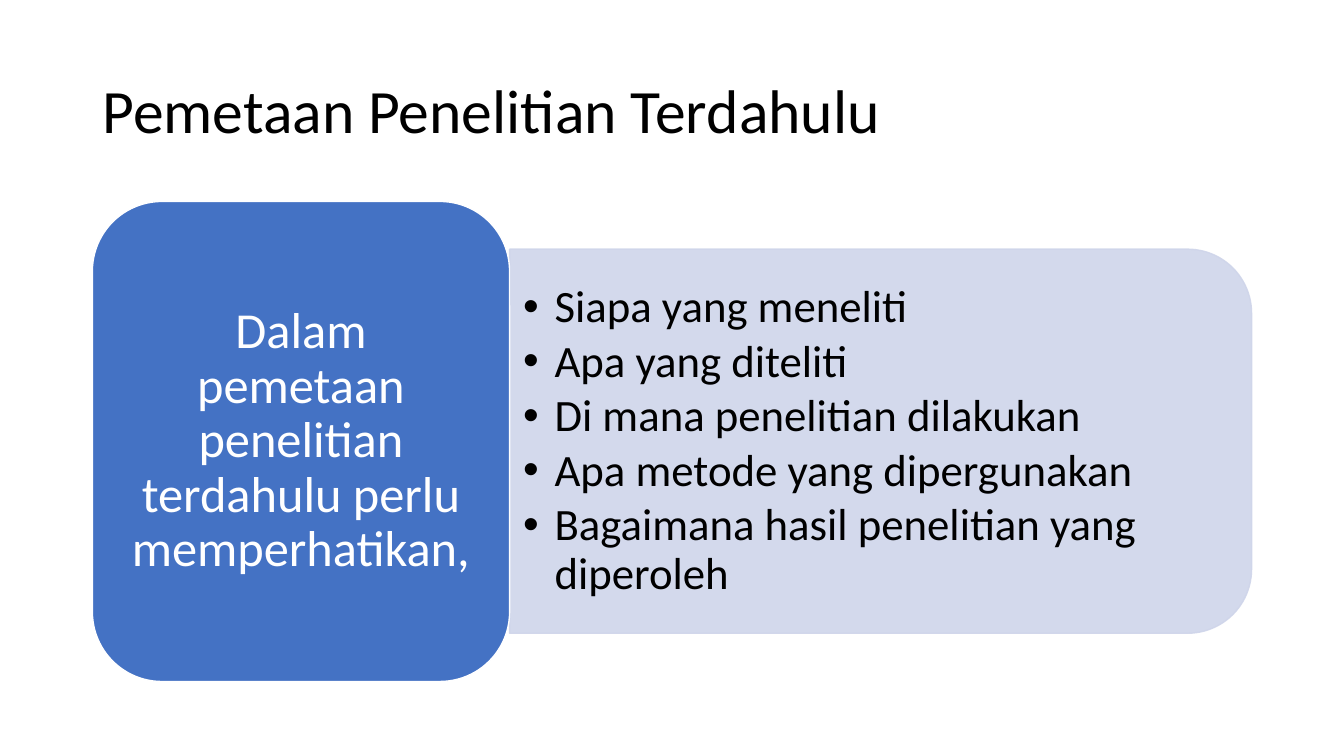
from lxml import etree
from pptx import Presentation
from pptx.dml.color import RGBColor
from pptx.enum.shapes import MSO_SHAPE
from pptx.enum.text import MSO_ANCHOR, PP_ALIGN
from pptx.oxml.ns import qn
from pptx.util import Pt

ROUND_RECT = MSO_SHAPE.ROUNDED_RECTANGLE
ROUND_TOP = MSO_SHAPE.ROUND_2_SAME_RECTANGLE
LEFT, CENTER = PP_ALIGN.LEFT, PP_ALIGN.CENTER
MIDDLE = MSO_ANCHOR.MIDDLE

TITLE = "Pemetaan Penelitian Terdahulu"
PROMPT = "Dalam pemetaan penelitian terdahulu perlu memperhatikan,"
POINTS = [
    "Siapa yang meneliti",
    "Apa yang diteliti",
    "Di mana penelitian dilakukan",
    "Apa metode yang dipergunakan",
    "Bagaimana hasil penelitian yang diperoleh",
]


def rgb(value):
    return RGBColor.from_string(value)


class SlideBuilder:
    font = "Calibri"
    black, white, blue, pale = "000000", "FFFFFF", "4472C4", "CFD5EA"

    def __init__(self, prs):
        self.s = prs.slides.add_slide(prs.slide_layouts[5])

    def text(self, sp, lines, size, color, align=LEFT, margins=(7.2, 3.6),
             space_after=0, bullet_indent=0):
        tf = sp.text_frame
        side, edge = margins
        frame = {"word_wrap": True, "vertical_anchor": MIDDLE,
                 "margin_left": Pt(side), "margin_right": Pt(side),
                 "margin_top": Pt(edge), "margin_bottom": Pt(edge)}
        for name, value in frame.items():
            setattr(tf, name, value)
        for i, line in enumerate(lines):
            p = tf.paragraphs[0] if i == 0 else tf.add_paragraph()
            layout = {"alignment": align, "line_spacing": 0.9,
                      "space_before": Pt(0), "space_after": Pt(space_after)}
            for name, value in layout.items():
                setattr(p, name, value)
            if bullet_indent:
                self.bullet(p, bullet_indent)
            r = p.add_run()
            r.text = line
            for name, value in {"name": self.font, "size": Pt(size)}.items():
                setattr(r.font, name, value)
            r.font.color.rgb = rgb(color)

    def bullet(self, p, indent):
        pPr = p._p.get_or_add_pPr()
        pPr.set("marL", str(Pt(indent)))
        pPr.set("indent", str(-Pt(indent)))
        etree.SubElement(pPr, qn("a:buFont")).set("typeface", "Arial")
        etree.SubElement(pPr, qn("a:buChar")).set("char", "•")

    def title(self, text, box):
        sp = self.s.shapes.title
        for name, value in zip(("left", "top", "width", "height"), box):
            setattr(sp, name, Pt(value))
        self.text(sp, [text], 44, self.black)

    def shape(self, kind, box, fill, line, rotation=0, opacity=100):
        sp = self.s.shapes.add_shape(kind, *map(Pt, box))
        sp.shadow.inherit = False
        sp.rotation = rotation
        sp.fill.solid()
        sp.fill.fore_color.rgb = rgb(fill)
        sp.line.color.rgb = rgb(line)
        sp.line.width = Pt(1)
        if opacity < 100:
            for clr in sp._element.spPr.iter(qn("a:srgbClr")):
                etree.SubElement(clr, qn("a:alpha")).set("val", str(opacity * 1000))
        return sp

    def textbox(self, box, lines, size, color, **style):
        sp = self.s.shapes.add_textbox(*map(Pt, box))
        self.text(sp, lines, size, color, **style)


def main():
    prs = Presentation()
    prs.slide_width, prs.slide_height = Pt(960), Pt(540)
    b = SlideBuilder(prs)

    # Title
    b.title(TITLE, (66, 28.8, 828, 104.4))

    # Pale panel, turned so that its rounded end faces right
    b.shape(ROUND_TOP, (491.8, 50.2, 274.4, 530), b.pale, b.pale,
            rotation=90, opacity=90)
    b.textbox((364, 191.5, 516, 247.7), POINTS, 32, b.black,
              margins=(9.6, 4.8), space_after=4.3, bullet_indent=22.5)

    # Blue card with the prompt
    card = b.shape(ROUND_RECT, (66, 143.9, 298, 342.9), b.blue, b.white)
    b.text(card, [PROMPT], 36, b.white, align=CENTER, margins=(10.8, 5.4))

    prs.save("out.pptx")


if __name__ == "__main__":
    main()
